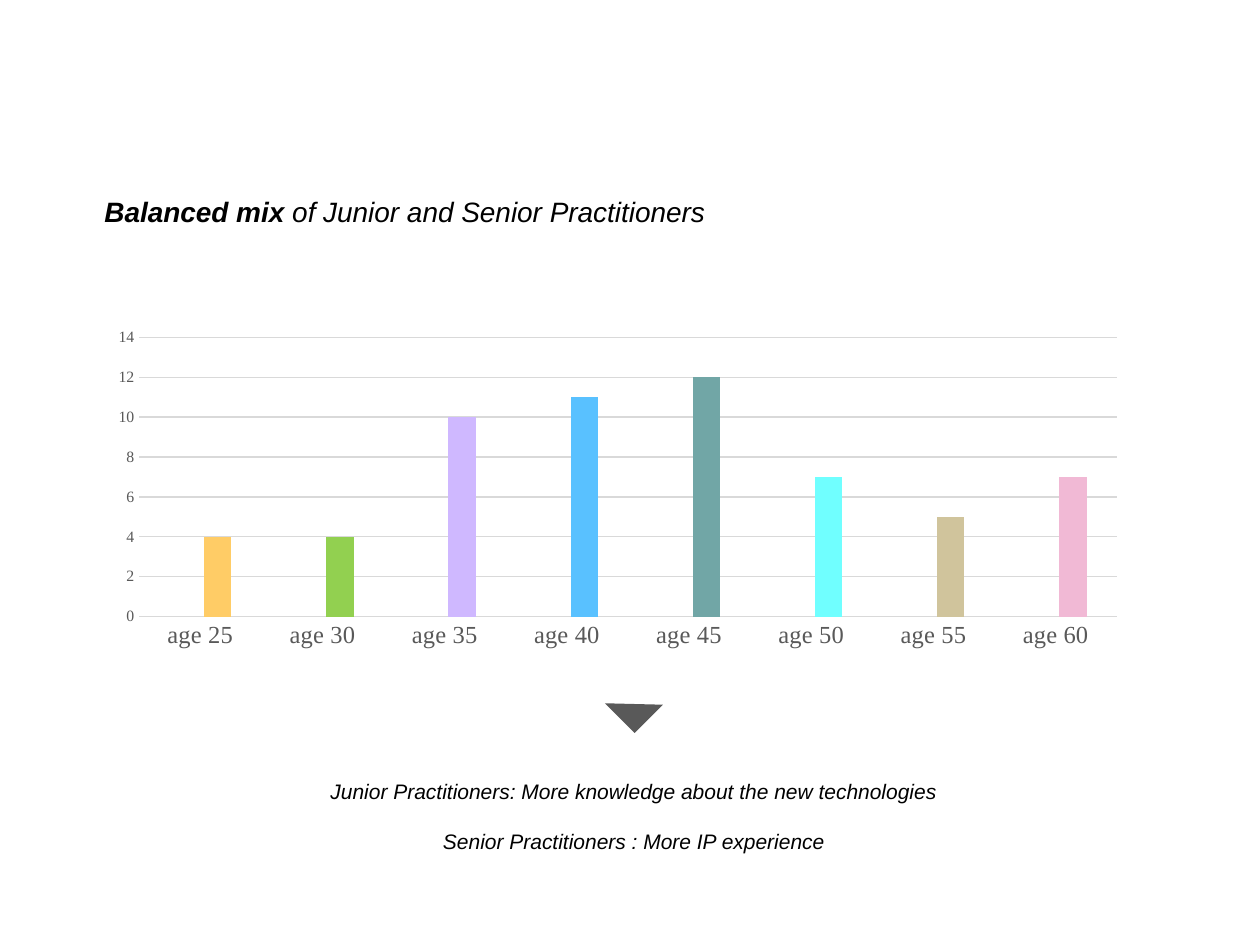
import pptx
import pptx.util
import pptx.chart.data
import pptx.dml.color
import pptx.enum.chart
import pptx.enum.shapes
import pptx.enum.text
import pptx.oxml

SCALE = 914400 / 126
ALIGN = pptx.enum.text.PP_ALIGN
GREY, RULE = "595959", "D9D9D9"
SERIF = "Times New Roman"
AGES = {
    "age 25": (4, "FFCC66"),
    "age 30": (4, "92D050"),
    "age 35": (10, "CFB8FF"),
    "age 40": (11, "59C1FF"),
    "age 45": (12, "71A6A6"),
    "age 50": (7, "70FFFF"),
    "age 55": (5, "D0C49C"),
    "age 60": (7, "F1B9D5"),
}


def px(*sizes):
    return [round(size * SCALE) for size in sizes]


def rgb(code):
    return pptx.dml.color.RGBColor.from_string(code)


def paint(fill, code):
    fill.solid()
    fill.fore_color.rgb = rgb(code)


def style(font, name, size, color):
    font.name = name
    font.size = pptx.util.Pt(size)
    font.color.rgb = rgb(color)


def rule(line):
    line.color.rgb = rgb(RULE)
    line.width = pptx.util.Pt(0.75)


def add_text(slide, box, size, align, runs):
    """Add one italic line from (text, bold) runs."""
    frame = slide.shapes.add_textbox(*px(*box)).text_frame
    frame.word_wrap = True
    frame.auto_size = pptx.enum.text.MSO_AUTO_SIZE.SHAPE_TO_FIT_TEXT
    line = frame.paragraphs[0]
    line.alignment = align
    for text, bold in runs:
        run = line.add_run()
        run.text = text
        style(run.font, "Arial", size, "000000")
        run.font.bold = bold
        run.font.italic = True


def add_arrow(slide, box):
    kind = pptx.enum.shapes.MSO_SHAPE.RIGHT_TRIANGLE
    arrow = slide.shapes.add_shape(kind, *px(*box))
    arrow.rotation = 315
    arrow.shadow.inherit = False
    paint(arrow.fill, GREY)
    arrow.line.fill.background()


def set_plot(chart, x, y, w, h):
    """Fix the inner plot area, in shares of the chart."""
    area = chart._chartSpace.chart.plotArea
    for old in area.findall(pptx.oxml.ns.qn("c:layout")):
        area.remove(old)
    parts = "".join(
        f'<c:{tag} val="{val}"/>'
        for tag, val in (
            ("layoutTarget", "inner"), ("xMode", "edge"), ("yMode", "edge"),
            ("x", x), ("y", y), ("w", w), ("h", h),
        )
    )
    space = pptx.oxml.ns.nsdecls("c")
    area.insert(0, pptx.oxml.parse_xml(
        f"<c:layout {space}><c:manualLayout>{parts}</c:manualLayout></c:layout>"
    ))


def set_axis(axis, size):
    axis.major_tick_mark = pptx.enum.chart.XL_TICK_MARK.NONE
    axis.minor_tick_mark = pptx.enum.chart.XL_TICK_MARK.NONE
    style(axis.tick_labels.font, SERIF, size, GREY)


def add_chart(slide, box):
    data = pptx.chart.data.CategoryChartData()
    data.categories = list(AGES)
    data.add_series("Series 1", [None] * len(AGES))
    data.add_series("Series 2", [count for count, _ in AGES.values()])
    kind = pptx.enum.chart.XL_CHART_TYPE.COLUMN_CLUSTERED
    chart = slide.shapes.add_chart(kind, *px(*box), data).chart
    style(chart.font, SERIF, 10, "000000")
    chart.has_legend = False
    chart.has_title = False
    set_plot(chart, 0.062, 0.115, 0.901, 0.625)

    plot = chart.plots[0]
    plot.gap_width = 219
    plot.overlap = -27
    plot.vary_by_categories = False
    for series, color in zip(plot.series, ("009999", "FF99CC")):
        paint(series.format.fill, color)
    for i, (_, color) in enumerate(AGES.values()):
        paint(plot.series[1].points[i].format.fill, color)

    set_axis(chart.category_axis, 14)
    rule(chart.category_axis.format.line)
    axis = chart.value_axis
    set_axis(axis, 9)
    axis.minimum_scale, axis.maximum_scale, axis.major_unit = 0, 14, 2
    axis.format.line.fill.background()
    rule(axis.major_gridlines.format.line)


def main():
    deck = pptx.Presentation()
    deck.slide_width, deck.slide_height = px(1260, 945)
    slide = deck.slides.add_slide(deck.slide_layouts[6])
    add_text(slide, (92, 188, 1100, 47), 16, ALIGN.JUSTIFY, [
        ("Balanced mix ", True),
        ("of Junior and Senior Practitioners", False),
    ])
    add_arrow(slide, (614, 683, 40, 42))
    add_text(slide, (256, 772, 756, 38), 12, ALIGN.CENTER, [
        ("Junior Practitioners: More knowledge about the new technologies", False),
    ])
    add_text(slide, (265, 822, 738, 38), 12, ALIGN.CENTER, [
        ("Senior Practitioners : More IP experience", False),
    ])
    add_chart(slide, (72, 286, 1085, 447))
    deck.save("out.pptx")


if __name__ == "__main__":
    main()
